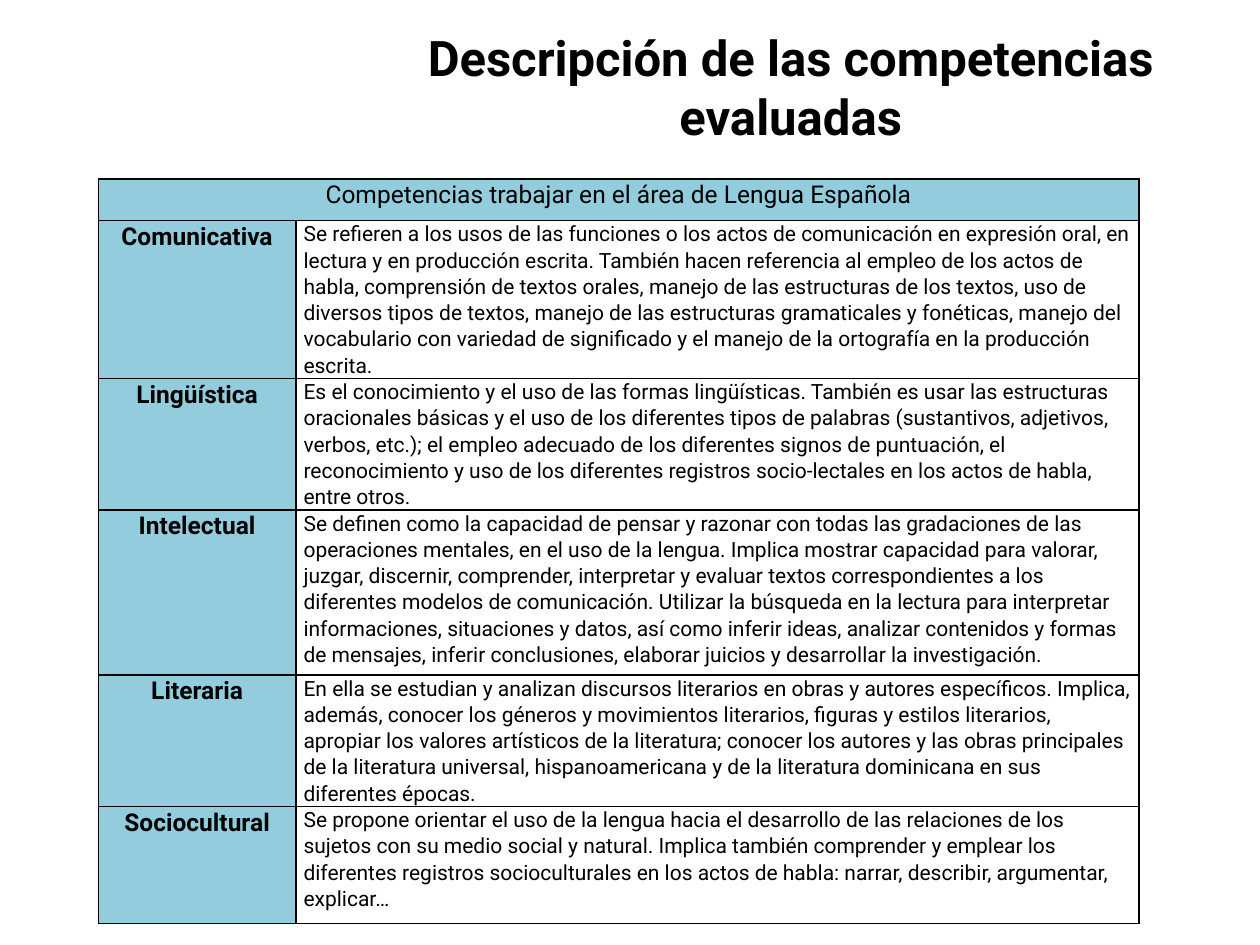
from lxml import etree
from pptx import Presentation
from pptx.dml.color import RGBColor
from pptx.enum import text
from pptx.oxml.ns import qn
from pptx.util import Inches, Pt

FONT = "Roboto"
BLACK = "000000"
LABEL_FILL = "93CDDD"

HEADING = "Competencias trabajar en el área de Lengua Española"
COLUMN_WIDTHS = [1.57, 6.69]
HEADING_HEIGHT = 0.33

# Label, description, row height in inches
COMPETENCIAS = [
    ("Comunicativa",
     "Se refieren a los usos de las funciones o los actos de comunicación en "
     "expresión oral, en lectura y en producción escrita. También hacen "
     "referencia al empleo de los actos de habla, comprensión de textos orales, "
     "manejo de las estructuras de los textos, uso de diversos tipos de textos, "
     "manejo de las estructuras gramaticales y fonéticas, manejo del vocabulario "
     "con variedad de significado y el manejo de la ortografía en la producción "
     "escrita.", 1.25),
    ("Lingüística",
     "Es el conocimiento y el uso de las formas lingüísticas. También es usar las "
     "estructuras oracionales básicas y el uso de los diferentes tipos de palabras "
     "(sustantivos, adjetivos, verbos, etc.); el empleo adecuado de los diferentes "
     "signos de puntuación, el reconocimiento y uso de los diferentes registros "
     "socio-lectales en los actos de habla, entre otros.", 1.04),
    ("Intelectual",
     "Se definen como la capacidad de pensar y razonar con todas las gradaciones "
     "de las operaciones mentales, en el uso de la lengua. Implica mostrar "
     "capacidad para valorar, juzgar, discernir, comprender, interpretar y evaluar "
     "textos correspondientes a los diferentes modelos de comunicación. Utilizar "
     "la búsqueda en la lectura para interpretar informaciones, situaciones y "
     "datos, así como inferir ideas, analizar contenidos y formas de mensajes, "
     "inferir conclusiones, elaborar juicios y desarrollar la investigación.", 1.31),
    ("Literaria",
     "En ella se estudian y analizan discursos literarios en obras y autores "
     "específicos. Implica, además, conocer los géneros y movimientos literarios, "
     "figuras y estilos literarios, apropiar los valores artísticos de la "
     "literatura; conocer los autores y las obras principales de la literatura "
     "universal, hispanoamericana y de la literatura dominicana en sus diferentes "
     "épocas.", 1.04),
    ("Sociocultural",
     "Se propone orientar el uso de la lengua hacia el desarrollo de las relaciones "
     "de los sujetos con su medio social y natural. Implica también comprender y "
     "emplear los diferentes registros socioculturales en los actos de habla: "
     "narrar, describir, argumentar, explicar…", 0.93),
]


def color(value):
    return RGBColor.from_string(value)


def write(paragraph, content, size, bold=False, centered=False):
    paragraph.alignment = text.PP_ALIGN.CENTER if centered else text.PP_ALIGN.LEFT
    run = paragraph.add_run()
    run.text = content
    run.font.name = FONT
    run.font.size = Pt(size)
    run.font.bold = bold
    run.font.color.rgb = color(BLACK)


def add_borders(cell):
    """Draw a 1 pt line on each side; borders precede the fill in tcPr."""
    properties = cell._tc.get_or_add_tcPr()
    for index, side in enumerate(("lnL", "lnR", "lnT", "lnB")):
        line = etree.Element(qn(f"a:{side}"), w=str(Pt(1)))
        fill = etree.SubElement(line, qn("a:solidFill"))
        etree.SubElement(fill, qn("a:srgbClr"), val=BLACK)
        properties.insert(index, line)


def fill_cell(cell, content, size, bold=False, label=True):
    cell.margin_left = cell.margin_right = Inches(0.06)
    cell.margin_top = cell.margin_bottom = 0
    if label:
        cell.fill.solid()
        cell.fill.fore_color.rgb = color(LABEL_FILL)
    else:
        cell.fill.background()
    add_borders(cell)
    if content:
        paragraph = cell.text_frame.paragraphs[0]
        paragraph.line_spacing = 1.07
        write(paragraph, content, size, bold, centered=label)


def add_title(slide):
    box = slide.shapes.add_textbox(Inches(2.78), Inches(0.17), Inches(6.99), Inches(1.35))
    box.text_frame.word_wrap = True
    write(box.text_frame.paragraphs[0], "Descripción de las competencias evaluadas",
          28, bold=True, centered=True)


def add_competence_table(slide):
    heights = [HEADING_HEIGHT] + [height for _, _, height in COMPETENCIAS]
    frame = slide.shapes.add_table(
        len(heights), len(COLUMN_WIDTHS), Inches(0.78), Inches(1.42),
        Inches(sum(COLUMN_WIDTHS)), Inches(sum(heights)))
    table = frame.table
    table.first_row = table.horz_banding = False
    for column, width in zip(table.columns, COLUMN_WIDTHS):
        column.width = Inches(width)
    for row, height in zip(table.rows, heights):
        row.height = Inches(height)

    # Heading across both columns
    fill_cell(table.cell(0, 0), HEADING, 14)
    fill_cell(table.cell(0, 1), "", 14)
    table.cell(0, 0).merge(table.cell(0, 1))

    # One row per competence
    for index, (name, description, _) in enumerate(COMPETENCIAS, start=1):
        fill_cell(table.cell(index, 0), name, 14, bold=True)
        fill_cell(table.cell(index, 1), description, 12, label=False)


def main():
    presentation = Presentation()
    presentation.slide_width = Inches(10)
    presentation.slide_height = Inches(7.5)
    slide = presentation.slides.add_slide(presentation.slide_layouts[6])
    add_competence_table(slide)
    add_title(slide)
    presentation.save("out.pptx")


if __name__ == "__main__":
    main()
